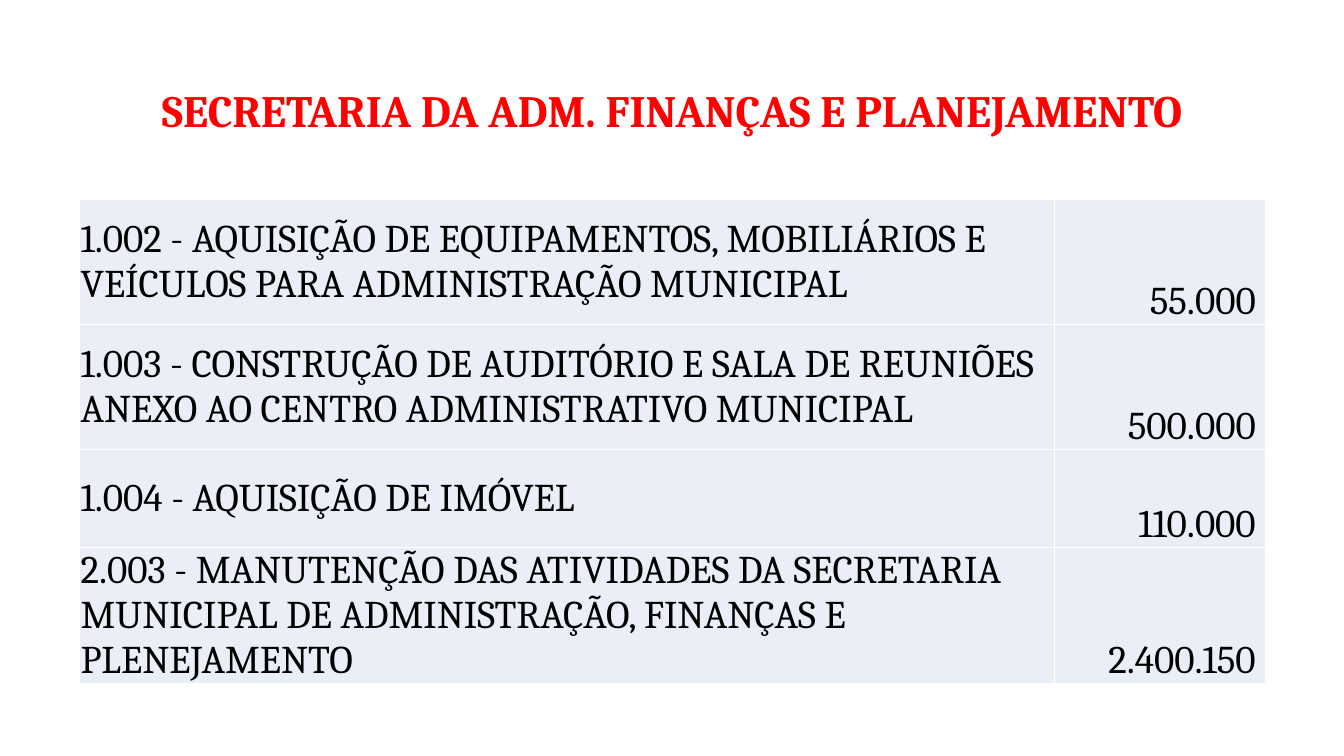
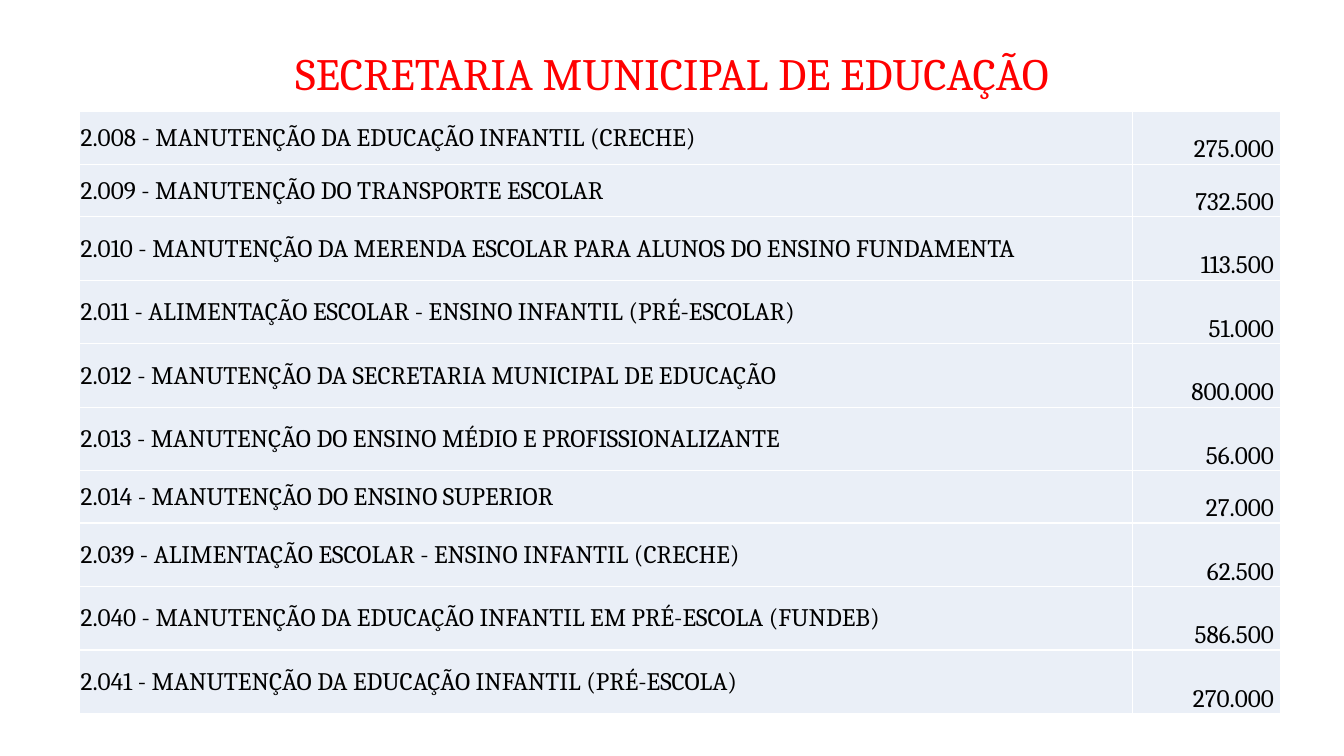
from dataclasses import dataclass

from lxml import etree
from pptx import Presentation
from pptx.dml.color import RGBColor
from pptx.enum.text import MSO_ANCHOR, PP_ALIGN
from pptx.oxml.ns import qn
from pptx.util import Inches, Pt

CENTER, LEFT, RIGHT = PP_ALIGN.CENTER, PP_ALIGN.LEFT, PP_ALIGN.RIGHT
MIDDLE, BOTTOM = MSO_ANCHOR.MIDDLE, MSO_ANCHOR.BOTTOM
TITLE_ONLY = 5


@dataclass(frozen=True)
class Theme:
    font: str = "Cambria"
    title_color: str = "FF0000"
    text_color: str = "000000"
    cell_fill: str = "EAEFF7"
    border_color: str = "FFFFFF"
    border_width: int = Pt(1)
    title_size: int = 32
    cell_margin: float = 0.01
    value_gap: float = 0.22  # space right of each value, in ems


THEME = Theme()

TITLE_LEFT, TITLE_TOP, TITLE_WIDTH = 0.92, 0.4, 11.5
TABLE_LEFT = 0.79

BUDGETS = [
    {
        "title": "SECRETARIA DA ADM. FINANÇAS E PLANEJAMENTO",
        "bold": True,
        "title_height": 1.45,
        "table_top": 1.98,
        "columns": (9.67, 2.09),
        "size": 28,
        "row_height": 1.24,
        "short_row_height": 0.97,
        "short_rows": {"1.004"},
        "actions": [
            ("1.002", "AQUISIÇÃO DE EQUIPAMENTOS, MOBILIÁRIOS E VEÍCULOS PARA ADMINISTRAÇÃO MUNICIPAL", "55.000"),
            ("1.003", "CONSTRUÇÃO DE AUDITÓRIO E SALA DE REUNIÕES ANEXO AO CENTRO ADMINISTRATIVO MUNICIPAL", "500.000"),
            ("1.004", "AQUISIÇÃO DE IMÓVEL", "110.000"),
            ("2.003", "MANUTENÇÃO DAS ATIVIDADES DA SECRETARIA MUNICIPAL DE ADMINISTRAÇÃO, FINANÇAS E PLENEJAMENTO",
             "2.400.150"),
        ],
    },
    {
        "title": "SECRETARIA MUNICIPAL DE EDUCAÇÃO",
        "bold": False,
        "title_height": 0.71,
        "table_top": 1.11,
        "columns": (10.44, 1.47),
        "size": 18,
        "row_height": 0.63,
        "short_row_height": 0.52,
        "short_rows": {"2.008", "2.009", "2.014"},
        "actions": [
            ("2.008", "MANUTENÇÃO DA EDUCAÇÃO INFANTIL (CRECHE)", "275.000"),
            ("2.009", "MANUTENÇÃO DO TRANSPORTE ESCOLAR", "732.500"),
            ("2.010", "MANUTENÇÃO DA MERENDA ESCOLAR PARA ALUNOS DO ENSINO FUNDAMENTA", "113.500"),
            ("2.011", "ALIMENTAÇÃO ESCOLAR - ENSINO INFANTIL (PRÉ-ESCOLAR)", "51.000"),
            ("2.012", "MANUTENÇÃO DA SECRETARIA MUNICIPAL DE EDUCAÇÃO", "800.000"),
            ("2.013", "MANUTENÇÃO DO ENSINO MÉDIO E PROFISSIONALIZANTE", "56.000"),
            ("2.014", "MANUTENÇÃO DO ENSINO SUPERIOR", "27.000"),
            ("2.039", "ALIMENTAÇÃO ESCOLAR - ENSINO INFANTIL (CRECHE)", "62.500"),
            ("2.040", "MANUTENÇÃO DA EDUCAÇÃO INFANTIL EM PRÉ-ESCOLA (FUNDEB)", "586.500"),
            ("2.041", "MANUTENÇÃO DA EDUCAÇÃO INFANTIL (PRÉ-ESCOLA)", "270.000"),
        ],
    },
]


def write(frame, text, size, color, align, bold=False):
    frame.text = text
    paragraph = frame.paragraphs[0]
    paragraph.alignment = align
    font = paragraph.runs[0].font
    font.name, font.size, font.bold = THEME.font, Pt(size), bold
    font.color.rgb = RGBColor.from_string(color)
    return paragraph


def add_borders(cell):
    properties = cell._tc.get_or_add_tcPr()
    for side in ("a:lnL", "a:lnR", "a:lnT", "a:lnB"):
        line = etree.SubElement(properties, qn(side), w=str(int(THEME.border_width)))
        fill = etree.SubElement(line, qn("a:solidFill"))
        etree.SubElement(fill, qn("a:srgbClr"), val=THEME.border_color)


def fill_cell(cell, text, size, align, anchor, right_margin):
    write(cell.text_frame, text, size, THEME.text_color, align)
    cell.vertical_anchor = anchor
    cell.margin_left = cell.margin_top = Inches(THEME.cell_margin)
    cell.margin_right = Inches(right_margin)
    cell.margin_bottom = 0
    add_borders(cell)
    cell.fill.solid()
    cell.fill.fore_color.rgb = RGBColor.from_string(THEME.cell_fill)


def add_title(slide, budget):
    title = slide.shapes.title
    title.left, title.top = Inches(TITLE_LEFT), Inches(TITLE_TOP)
    title.width, title.height = Inches(TITLE_WIDTH), Inches(budget["title_height"])
    title.text_frame.vertical_anchor = MIDDLE
    paragraph = write(title.text_frame, budget["title"], THEME.title_size,
                      THEME.title_color, CENTER, budget["bold"])
    paragraph.line_spacing = 0.9


def add_budget_table(slide, budget):
    actions, columns, size = budget["actions"], budget["columns"], budget["size"]
    heights = [budget["short_row_height" if code in budget["short_rows"] else "row_height"]
               for code, _, _ in actions]
    table = slide.shapes.add_table(
        len(actions), len(columns), Inches(TABLE_LEFT), Inches(budget["table_top"]),
        Inches(sum(columns)), Inches(sum(heights))).table
    table.first_row = table.horz_banding = False
    for column, width in zip(table.columns, columns):
        column.width = Inches(width)

    value_margin = THEME.cell_margin + THEME.value_gap * size / 72
    for row, height, (code, action, value) in zip(table.rows, heights, actions):
        row.height = Inches(height)
        action_cell, value_cell = row.cells
        fill_cell(action_cell, f"{code} - {action}", size, LEFT, MIDDLE, THEME.cell_margin)
        fill_cell(value_cell, value, size, RIGHT, BOTTOM, value_margin)


def main():
    deck = Presentation()
    deck.slide_width, deck.slide_height = Inches(13.33), Inches(7.5)
    for budget in BUDGETS:
        slide = deck.slides.add_slide(deck.slide_layouts[TITLE_ONLY])
        add_title(slide, budget)
        add_budget_table(slide, budget)
    deck.save("out.pptx")


if __name__ == "__main__":
    main()
